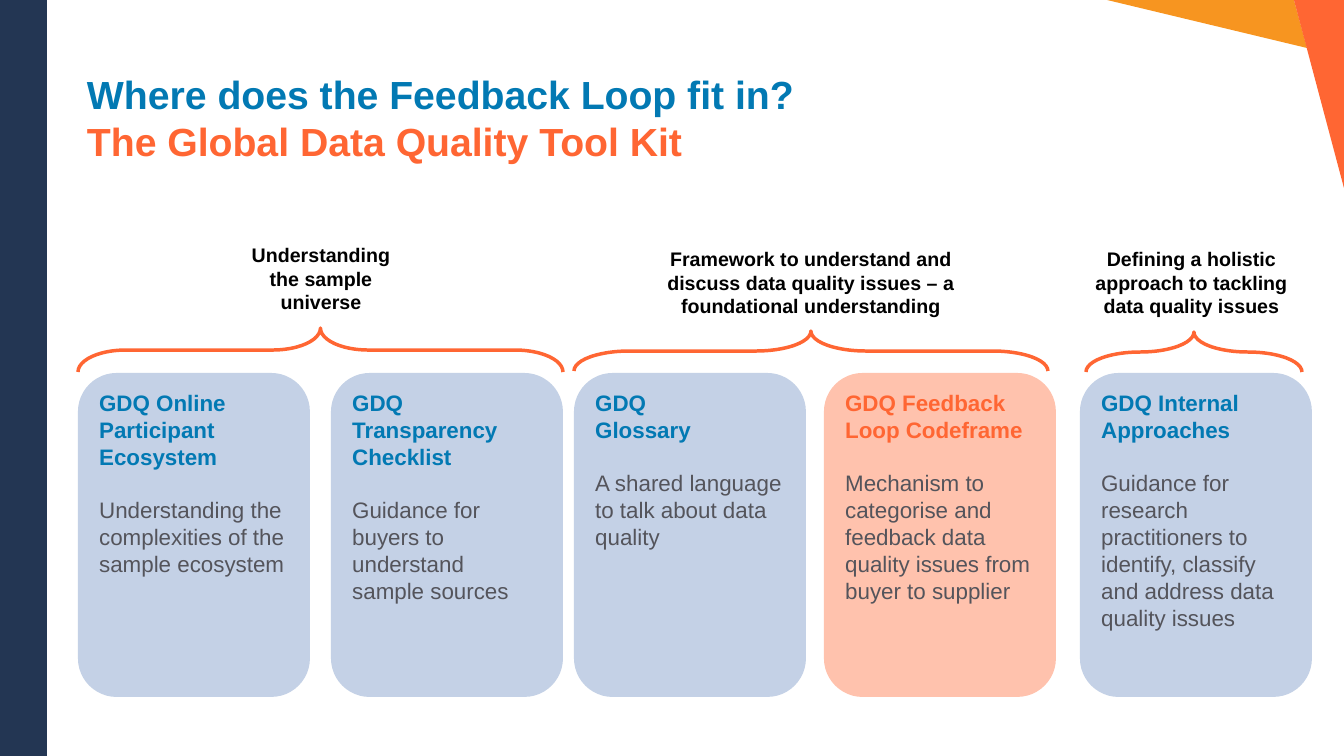
import pptx
import pptx.util
import pptx.dml.color
import pptx.enum.shapes
import pptx.enum.text

RGBColor = pptx.dml.color.RGBColor
MSO_SHAPE = pptx.enum.shapes.MSO_SHAPE
PP_ALIGN = pptx.enum.text.PP_ALIGN
MSO_ANCHOR = pptx.enum.text.MSO_ANCHOR

NAVY = RGBColor(0x23, 0x36, 0x53)
AMBER = RGBColor(0xF7, 0x95, 0x20)
ORANGE = RGBColor(0xFF, 0x66, 0x33)
BLUE = RGBColor(0x02, 0x79, 0xB3)
PALE_BLUE = RGBColor(0xC4, 0xD1, 0xE6)
PALE_ORANGE = RGBColor(0xFF, 0xC2, 0xAD)
GREY = RGBColor(0x54, 0x54, 0x5B)
BLACK = RGBColor(0, 0, 0)

# Content; lengths in px
HEADLINE = [("Where does the Feedback Loop fit in?", BLUE),
            ("The Global Data Quality Tool Kit", ORANGE)]
CORNER = [(AMBER, [(1107, 0), (1294, 0), (1307, 48)]),
          (ORANGE, [(1294, 0), (1344, 0), (1344, 188)])]
# left, tool name, description, name colour, card fill
TOOLS = [
    (78, "GDQ Online Participant Ecosystem",
     "Understanding the complexities of the sample ecosystem", BLUE, PALE_BLUE),
    (331, "GDQ Transparency Checklist",
     "Guidance for buyers to understand sample sources", BLUE, PALE_BLUE),
    (574, "GDQ\vGlossary",
     "A shared language to talk about data quality", BLUE, PALE_BLUE),
    (824, "GDQ Feedback Loop Codeframe",
     "Mechanism to categorise and feedback data quality issues from buyer to supplier",
     ORANGE, PALE_ORANGE),
    (1080, "GDQ Internal Approaches",
     "Guidance for research practitioners to identify, classify and address data quality issues",
     BLUE, PALE_BLUE),
]
CARD_TOP, CARD_WIDTH, CARD_HEIGHT = 373, 232, 324
# purpose, its box (left, top, width), brace (left, top, span, depth, curl)
PURPOSES = [
    ("Understanding the sample universe", (239, 238, 164), (78, 328, 485, 44, 1.09)),
    ("Framework to understand and discuss data quality issues – a foundational understanding",
     (635, 242, 352), (574, 331, 474, 40, 1.38)),
    ("Defining a holistic approach to tackling data quality issues",
     (1070, 242, 243), (1086, 332, 216, 40, 1.38)),
]
PURPOSE_HEIGHT = 82
EMU_PER_PX = 914400 / 100.8


def px(*lengths):
    return [pptx.util.Emu(round(length * EMU_PER_PX)) for length in lengths]


def paint(shape, color):
    shape.shadow.inherit = False
    shape.fill.solid()
    shape.fill.fore_color.rgb = color
    shape.line.fill.background()


def style(font, size, color, bold):
    font.name = "Arial"
    font.size = pptx.util.Pt(size)
    font.bold = bold
    font.color.rgb = color


deck = pptx.Presentation()
deck.slide_width, deck.slide_height = px(1344, 756)
slide = deck.slides.add_slide(deck.slide_layouts[5])
shapes = slide.shapes

# Corner triangles and side band
for color, corners in CORNER:
    outline = shapes.build_freeform(*corners[0], scale=EMU_PER_PX)
    outline.add_line_segments(corners[1:], close=True)
    paint(outline.convert_to_shape(), color)
paint(shapes.add_shape(MSO_SHAPE.RECTANGLE, *px(0, 0, 47, 756)), NAVY)

# Title
title = shapes.title
title.left, title.top, title.width, title.height = px(87, 87, 834, 77)
title_frame = title.text_frame
title_frame.auto_size = pptx.enum.text.MSO_AUTO_SIZE.NONE
title_frame.word_wrap = True
title_frame.vertical_anchor = MSO_ANCHOR.BOTTOM
title_frame.margin_left = title_frame.margin_right = 0
title_frame.margin_top = title_frame.margin_bottom = 0
headline = title_frame.paragraphs[0]
headline.alignment = PP_ALIGN.LEFT
for index, (words, color) in enumerate(HEADLINE):
    if index:
        headline.add_line_break()
    run = headline.add_run()
    run.text = words
    style(run.font, 28, color, True)

# Tool cards
for left, tool, description, color, fill in TOOLS:
    card = shapes.add_shape(MSO_SHAPE.ROUNDED_RECTANGLE,
                            *px(left, CARD_TOP, CARD_WIDTH, CARD_HEIGHT))
    paint(card, fill)
    card_frame = card.text_frame
    card_frame.word_wrap = True
    card_frame.vertical_anchor = MSO_ANCHOR.TOP
    name = card_frame.paragraphs[0]
    name.text = tool
    style(name.font, 16, color, True)
    detail = card_frame.add_paragraph()
    detail.text = description
    detail.space_before = pptx.util.Pt(19)
    style(detail.font, 16, GREY, False)
    name.alignment = detail.alignment = PP_ALIGN.LEFT

# Purposes, each over a brace turned to point up
for words, (left, top, width), (brace_left, brace_top, span, depth, curl) in PURPOSES:
    purpose = shapes.add_textbox(*px(left, top, width, PURPOSE_HEIGHT))
    purpose.text_frame.word_wrap = True
    caption = purpose.text_frame.paragraphs[0]
    caption.text = words
    caption.alignment = PP_ALIGN.CENTER
    style(caption.font, 14, BLACK, True)

    shift = (span - depth) / 2
    brace = shapes.add_shape(MSO_SHAPE.RIGHT_BRACE,
                             *px(brace_left + shift, brace_top - shift, depth, span))
    brace.rotation = 270
    brace.adjustments[0] = curl
    brace.adjustments[1] = 0.5
    brace.shadow.inherit = False
    brace.fill.background()
    brace.line.color.rgb = ORANGE
    brace.line.width = pptx.util.Pt(2.5)

deck.save("out.pptx")
